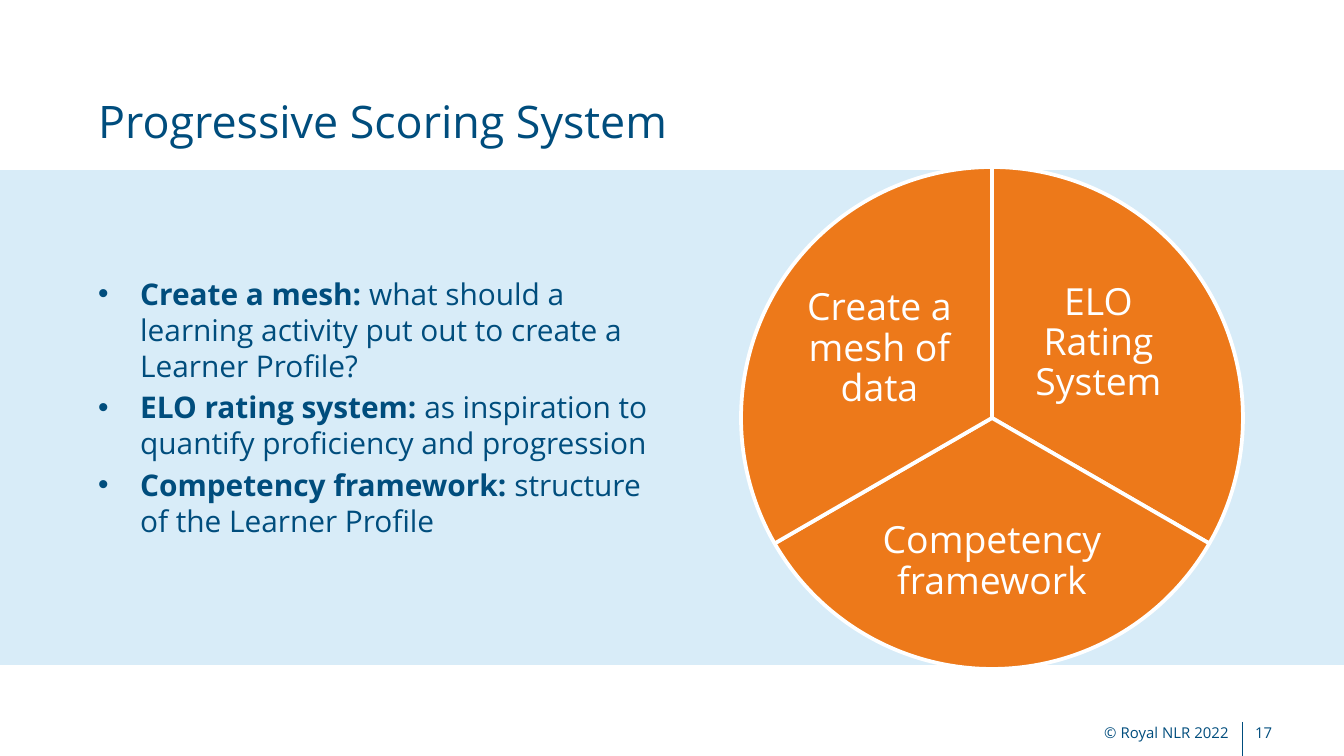
from dataclasses import dataclass
from math import cos, radians, sin, tan

from lxml.etree import SubElement
from pptx import Presentation
from pptx.dml.color import RGBColor
from pptx.enum.shapes import MSO_CONNECTOR as Connector, MSO_SHAPE as Shape
from pptx.enum.text import MSO_ANCHOR as Anchor, PP_ALIGN as Align
from pptx.oxml.ns import qn
from pptx.util import Emu, Pt

EMU_PER_PX = 914400 / 134.4


def px(length):
    return Emu(round(length * EMU_PER_PX))


@dataclass(frozen=True)
class Theme:
    font: str = "Open Sans"
    navy: RGBColor = RGBColor(0x00, 0x4D, 0x7D)
    pale_blue: RGBColor = RGBColor(0xD8, 0xEC, 0xF8)
    orange: RGBColor = RGBColor(0xED, 0x79, 0x1A)
    white: RGBColor = RGBColor(0xFF, 0xFF, 0xFF)
    title_size: int = 24
    wedge_size: int = 20
    body_size: int = 16
    footer_size: int = 8


def wedge_commands(radius, start, sweep):
    """Return the path of a pie slice in its circle's square, as two Bézier curves and a line."""
    step = radians(sweep / 2)
    handle = 4 / 3 * tan(step / 4)

    def rim(angle, tangent=0):
        return (radius * (1 + sin(angle) + tangent * cos(angle)),
                radius * (1 - cos(angle) + tangent * sin(angle)))

    first = radians(start)
    curves = [("a:cubicBezTo", [rim(a, handle), rim(a + step, -handle), rim(a + step)])
              for a in (first, first + step)]
    return [("a:moveTo", [rim(first)]), *curves, ("a:lnTo", [(radius, radius)]), ("a:close", [])]


class SlideBuilder:
    def __init__(self, slide, theme):
        self.shapes = slide.shapes
        self.theme = theme

    def format_runs(self, paragraph, size, color):
        for run in paragraph.runs:
            run.font.name = self.theme.font
            run.font.size = Pt(size)
            run.font.color.rgb = color

    def text_box(self, left, top, width, height, anchor=Anchor.MIDDLE):
        frame = self.shapes.add_textbox(px(left), px(top), px(width), px(height)).text_frame
        frame.word_wrap = True
        frame.vertical_anchor = anchor
        return frame

    def label(self, text, box, size, align=Align.LEFT):
        frame = self.text_box(*box)
        frame.text = text
        paragraph = frame.paragraphs[0]
        paragraph.alignment = align
        self.format_runs(paragraph, size, self.theme.navy)

    def band(self, left, top, width, height):
        shape = self.shapes.add_shape(Shape.RECTANGLE, px(left), px(top), px(width), px(height))
        shape.shadow.inherit = False
        shape.fill.solid()
        shape.fill.fore_color.rgb = self.theme.pale_blue
        shape.line.fill.background()

    def rule(self, x, top, bottom):
        line = self.shapes.add_connector(Connector.STRAIGHT, px(x), px(top), px(x), px(bottom))
        line.line.color.rgb = self.theme.navy
        line.line.width = Pt(0.25)
        SubElement(line._element.spPr, qn("a:effectLst"))

    def bullets(self, items, box, indent):
        """Add bullets, each a bold lead followed by plain text."""
        frame = self.text_box(*box, anchor=Anchor.TOP)
        for index, (lead, rest) in enumerate(items):
            paragraph = frame.add_paragraph() if index else frame.paragraphs[0]
            properties = paragraph._p.get_or_add_pPr()
            properties.set("marL", str(px(indent)))
            properties.set("indent", str(-px(indent)))
            SubElement(properties, qn("a:buFont"), typeface="Arial")
            SubElement(properties, qn("a:buChar"), char="•")
            if index:
                paragraph.space_before = Pt(0.2 * self.theme.body_size)
            for text, bold in ((lead, True), (rest, False)):
                run = paragraph.add_run()
                run.text = text
                run.font.bold = bold
            self.format_runs(paragraph, self.theme.body_size, self.theme.navy)

    def wedge(self, text, center, radius, start, sweep, text_area):
        """Add a pie slice, angles clockwise from the top, its text kept inside text_area."""
        left, top = (c - radius for c in center)
        right, bottom = (c + radius for c in center)
        builder = self.shapes.build_freeform(px(left), px(top))
        builder.add_line_segments([(px(right), px(top)), (px(right), px(bottom)),
                                   (px(left), px(bottom))])
        shape = builder.convert_to_shape()
        outline = next(shape._element.iter(qn("a:path")))
        for command in list(outline):
            outline.remove(command)
        for tag, points in wedge_commands(radius, start, sweep):
            command = SubElement(outline, qn(tag))
            for x, y in points:
                SubElement(command, qn("a:pt"), x=str(px(x)), y=str(px(y)))

        shape.shadow.inherit = False
        shape.fill.solid()
        shape.fill.fore_color.rgb = self.theme.orange
        shape.line.color.rgb = self.theme.white
        shape.line.width = Pt(2)

        text_left, text_top, width, height = text_area
        frame = shape.text_frame
        frame.margin_left = px(text_left - left)
        frame.margin_top = px(text_top - top)
        frame.margin_right = px(right - text_left - width)
        frame.margin_bottom = px(bottom - text_top - height)
        frame.word_wrap = True
        frame.vertical_anchor = Anchor.MIDDLE
        frame.text = text
        paragraph = frame.paragraphs[0]
        paragraph.alignment = Align.CENTER
        paragraph.line_spacing = 0.9
        self.format_runs(paragraph, self.theme.wedge_size, self.theme.white)


def main():
    presentation = Presentation()
    presentation.slide_width, presentation.slide_height = px(1344), px(756)
    slide = presentation.slides.add_slide(presentation.slide_layouts[6])
    theme = Theme()
    builder = SlideBuilder(slide, theme)

    builder.rule(1242, 722, 756)
    builder.band(0, 170, 1344, 495)
    builder.label("© Royal NLR 2022", (591, 713, 651, 40), theme.footer_size, Align.RIGHT)
    builder.label("17", (1242, 713, 62, 40), theme.footer_size)
    builder.label("Progressive Scoring System", (85, 87, 1189, 67), theme.title_size)

    builder.bullets([
        ("Create a mesh: ", "what should a learning activity put out to create a Learner Profile?"),
        ("ELO rating system: ", "as inspiration to quantify proficiency and progression"),
        ("Competency framework: ", "structure of the Learner Profile"),
    ], (85, 269, 595, 281), indent=42)

    wedges = [
        ("ELO Rating System", (1017, 264, 163, 159)),
        ("Competency framework", (877, 488, 230, 148)),
        ("Create a mesh of data", (798, 269, 163, 160)),
    ]
    sweep = 360 // len(wedges)
    for index, (text, text_area) in enumerate(wedges):
        builder.wedge(text, (992, 418), 251, index * sweep, sweep, text_area)

    presentation.save("out.pptx")


if __name__ == "__main__":
    main()
